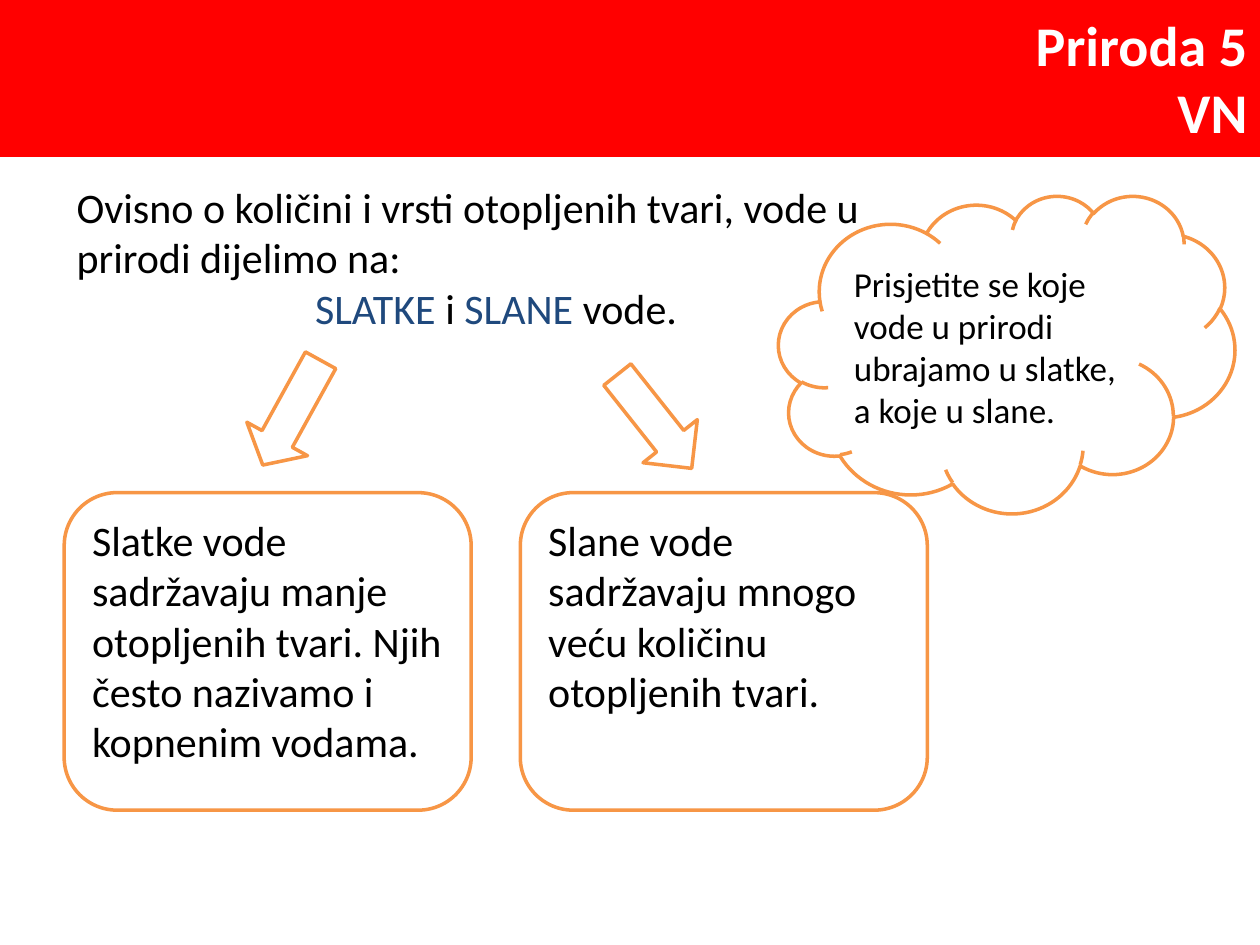
from pptx import Presentation
from pptx.dml.color import RGBColor
from pptx.enum.shapes import MSO_SHAPE
from pptx.enum.text import MSO_ANCHOR, PP_ALIGN
from pptx.util import Inches, Pt

RED, ORANGE, NAVY = "FF0000", "F79646", "1F497D"
WHITE, BLACK = "FFFFFF", "000000"


def color(code):
    return RGBColor.from_string(code)


def write(frame, paras, size=24, bold=False, align=PP_ALIGN.LEFT,
          anchor=MSO_ANCHOR.TOP, ink=BLACK):
    """Fill a frame; each paragraph is a string or a list of (text, colour)."""
    frame.word_wrap = True
    frame.vertical_anchor = anchor
    for i, runs in enumerate(paras):
        para = frame.paragraphs[0] if i == 0 else frame.add_paragraph()
        para.alignment = align
        for text, tint in [(runs, ink)] if isinstance(runs, str) else runs:
            run = para.add_run()
            run.text = text
            font = run.font
            font.name, font.size, font.bold = "Calibri", Pt(size), bold
            font.color.rgb = color(tint)


def shape(slide, kind, box, fill=WHITE, line=ORANGE, turn=0):
    item = slide.shapes.add_shape(kind, *map(Inches, box))
    item.shadow.inherit = False
    item.fill.solid()
    item.fill.fore_color.rgb = color(fill)
    item.line.color.rgb = color(line)
    item.line.width = Pt(2)
    item.rotation = turn
    return item


def header(slide, box):
    band = shape(slide, MSO_SHAPE.RECTANGLE, box, fill=RED, line=RED)
    write(band.text_frame, ["Priroda 5", "VN"], size=32, bold=True,
          align=PP_ALIGN.RIGHT, anchor=MSO_ANCHOR.MIDDLE, ink=WHITE)


def intro(slide, box):
    frame = slide.shapes.add_textbox(*map(Inches, box)).text_frame
    write(frame, [
        "Ovisno o količini i vrsti otopljenih tvari, vode u prirodi dijelimo na:",
        [("SLATKE ", NAVY), ("i", BLACK), (" SLANE ", NAVY), ("vode. ", BLACK)],
    ])
    frame.paragraphs[1].alignment = PP_ALIGN.CENTER


def types(slide, box):
    """Place the two water types side by side, each with its arrow above."""
    left, top, width, height = box
    gap = 0.39
    wide = (width - gap) / 2
    texts = [
        "Slatke vode sadržavaju manje otopljenih tvari. "
        "Njih često nazivamo i kopnenim vodama.",
        "Slane vode sadržavaju mnogo veću količinu otopljenih tvari.",
    ]
    for i, text in enumerate(texts):
        card = shape(slide, MSO_SHAPE.ROUNDED_RECTANGLE,
                     (left + i * (wide + gap), top, wide, height))
        write(card.text_frame, [text])
    for dx, dy, turn in [(1.53, 1.11, 28.9), (4.41, 1.04, 321.6)]:
        arrow = shape(slide, MSO_SHAPE.DOWN_ARROW,
                      (left + dx, top - dy, 0.55, 0.95), turn=turn)
        arrow.adjustments[1] = 0.43 if turn < 180 else 0.5


def reminder(slide, box):
    cloud = shape(slide, MSO_SHAPE.CLOUD, box)
    write(cloud.text_frame,
          ["Prisjetite se koje vode u prirodi ubrajamo u slatke, "
           "a koje u slane."], size=20, anchor=MSO_ANCHOR.MIDDLE)


def main():
    deck = Presentation()
    deck.slide_width, deck.slide_height = Inches(10), Inches(7.5)
    slide = deck.slides.add_slide(deck.slide_layouts[6])
    header(slide, (0, 0, 10, 1.23))
    intro(slide, (0.51, 1.39, 6.93, 1.31))
    types(slide, (0.51, 3.91, 6.85, 2.52))
    reminder(slide, (6.18, 1.55, 3.62, 2.52))
    deck.save("out.pptx")


if __name__ == "__main__":
    main()
